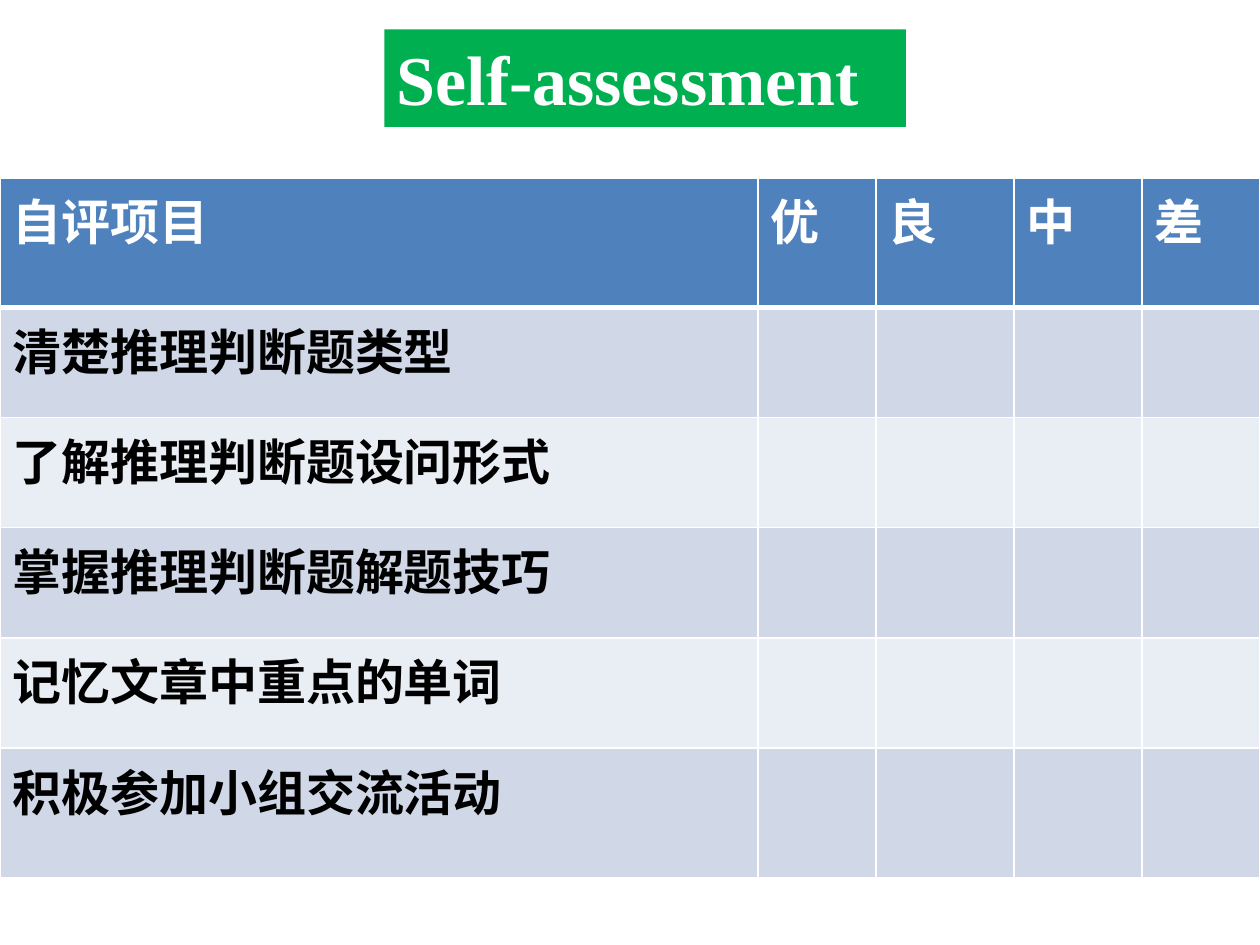
"""Build a self-assessment slide with a title banner and a rating table."""
from dataclasses import dataclass

from lxml import etree
from pptx import Presentation
from pptx.dml.color import RGBColor
from pptx.enum.shapes import MSO_SHAPE
from pptx.enum.text import MSO_ANCHOR, PP_ALIGN
from pptx.oxml.ns import qn
from pptx.util import Pt

RECTANGLE = MSO_SHAPE.RECTANGLE
LEFT = PP_ALIGN.LEFT
TOP = MSO_ANCHOR.TOP

TITLE = "Self-assessment "
HEADINGS = ["自评项目", "优", "良", "中", "差"]
ITEMS = [
    "清楚推理判断题类型",
    "了解推理判断题设问形式",
    "掌握推理判断题解题技巧",
    "记忆文章中重点的单词",
    "积极参加小组交流活动",
]

SLIDE_SIZE = (720, 540)
TITLE_BOX = (219.6, 16.8, 298, 55.7)
TABLE_TOP = 101.6
COLUMN_WIDTHS = [433.2, 67.4, 78.8, 73.2, 67.4]
ROW_HEIGHTS = [74, 63, 63, 63, 63, 74]


@dataclass(frozen=True)
class Theme:
    banner: str = "00B050"
    header: str = "4F81BD"
    bands: tuple = ("D0D8E8", "E9EDF4")
    light: str = "FFFFFF"
    dark: str = "000000"
    title_font: str = "Times New Roman"
    table_font: str = "Noto Sans CJK SC"
    title_size: int = 40
    table_size: int = 28
    thin_line: int = 1
    thick_line: int = 3


THEME = Theme()


def set_fill(target, color):
    target.fill.solid()
    target.fill.fore_color.rgb = RGBColor.from_string(color)


def add_text(paragraph, text, font_name, size, color):
    run = paragraph.add_run()
    run.text = text
    run.font.name = font_name
    run.font.size = Pt(size)
    run.font.bold = True
    run.font.color.rgb = RGBColor.from_string(color)
    east_asian = etree.Element(qn("a:ea"), typeface=font_name)
    run.font._element.find(qn("a:latin")).addnext(east_asian)


def set_borders(cell, widths):
    properties = cell._tc.get_or_add_tcPr()
    for position, (side, width) in enumerate(widths.items()):
        line = etree.Element(qn(f"a:ln{side}"), w=str(Pt(width)))
        fill = etree.SubElement(line, qn("a:solidFill"))
        etree.SubElement(fill, qn("a:srgbClr"), val=THEME.light)
        properties.insert(position, line)


def add_banner(slide):
    banner = slide.shapes.add_shape(RECTANGLE, *map(Pt, TITLE_BOX))
    banner.shadow.inherit = False
    set_fill(banner, THEME.banner)
    banner.line.fill.background()
    frame = banner.text_frame
    frame.word_wrap = True
    frame.vertical_anchor = TOP
    paragraph = frame.paragraphs[0]
    paragraph.alignment = LEFT
    add_text(paragraph, TITLE, THEME.title_font, THEME.title_size, THEME.light)


def add_rating_table(slide):
    rows = [HEADINGS] + [[item] + [""] * (len(HEADINGS) - 1) for item in ITEMS]
    table = slide.shapes.add_table(
        len(rows), len(HEADINGS), Pt(0), Pt(TABLE_TOP),
        Pt(sum(COLUMN_WIDTHS)), Pt(sum(ROW_HEIGHTS))).table
    for column, width in zip(table.columns, COLUMN_WIDTHS):
        column.width = Pt(width)
    for row, height in zip(table.rows, ROW_HEIGHTS):
        row.height = Pt(height)
    for row_index, texts in enumerate(rows):
        is_header = row_index == 0
        fill = THEME.header if is_header else THEME.bands[(row_index - 1) % 2]
        color = THEME.light if is_header else THEME.dark
        borders = dict.fromkeys("LRTB", THEME.thin_line)
        if row_index < 2:
            borders["B" if is_header else "T"] = THEME.thick_line
        for column_index, text in enumerate(texts):
            cell = table.cell(row_index, column_index)
            set_fill(cell, fill)
            set_borders(cell, borders)
            if text:
                add_text(cell.text_frame.paragraphs[0], text,
                         THEME.table_font, THEME.table_size, color)


def main():
    presentation = Presentation()
    presentation.slide_width, presentation.slide_height = map(Pt, SLIDE_SIZE)
    slide = presentation.slides.add_slide(presentation.slide_layouts[6])
    add_banner(slide)
    add_rating_table(slide)
    presentation.save("out.pptx")


main()
